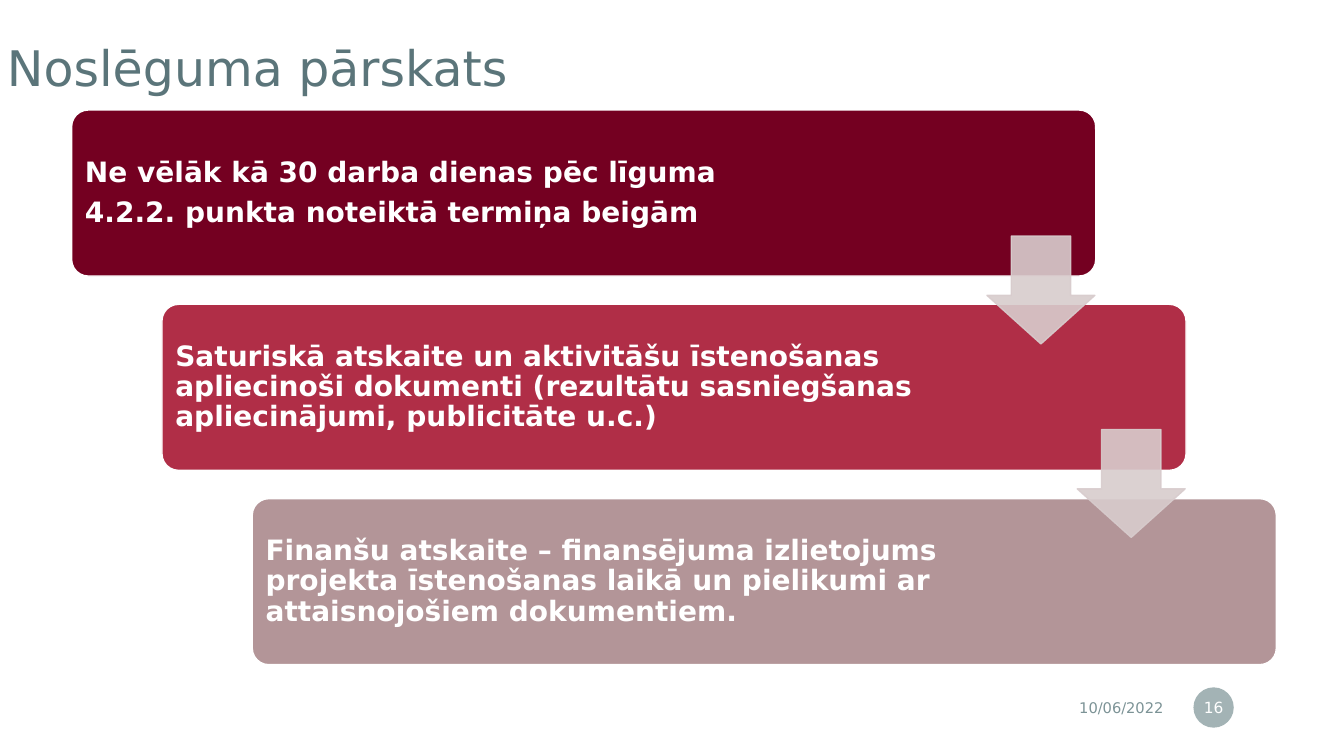
from lxml.etree import SubElement
from pptx import Presentation
from pptx.dml.color import RGBColor
from pptx.enum.shapes import MSO_SHAPE as Preset
from pptx.enum.text import MSO_ANCHOR as Anchor, PP_ALIGN as Align
from pptx.oxml.ns import qn
from pptx.util import Pt

# Content
TITLE = "Noslēguma pārskats"
DATE = "10/06/2022"
PAGE_NUMBER = "16"
# Fill, text width, space after each paragraph, paragraphs
STEPS = [
    ("740021", 602.6, 7, ["Ne vēlāk kā 30 darba dienas pēc līguma",
                          "4.2.2. punkta noteiktā termiņa beigām"]),
    ("B02E47", 582.5, 0, ["Saturiskā atskaite un aktivitāšu īstenošanas apliecinoši dokumenti "
                          "(rezultātu sasniegšanas apliecinājumi, publicitāte u.c.)"]),
    ("B39598", 582.5, 0, ["Finanšu atskaite – finansējuma izlietojums projekta īstenošanas "
                          "laikā un pielikumi ar attaisnojošiem dokumentiem."]),
]

# Layout in points
FONT = "DejaVu Sans"
CARD_LEFT, CARD_TOP, CARD_WIDTH, CARD_HEIGHT = 51.2, 78.6, 731.5, 118.6
CARD_SHIFT, CARD_PITCH = 64.5, 138.8
TEXT_GAP = 3.5
ARROW_LEFT, ARROW_TOP, ARROW_SIZE = 705, 168.6, 77.1
ARROW_PITCH = 138.2


def color(value):
    return RGBColor.from_string(value)


def set_opacity(fill, percent):
    tint = fill._xPr.find(qn("a:solidFill"))[0]
    SubElement(tint, qn("a:alpha"), val=str(percent * 1000))


def add_preset(preset, area, fill, line=None, adjust=(), opacity=100):
    shape = page.shapes.add_shape(preset, *map(Pt, area))
    shape.shadow.inherit = False
    for index, value in enumerate(adjust):
        shape.adjustments[index] = value
    shape.fill.solid()
    shape.fill.fore_color.rgb = color(fill)
    if line:
        shape.line.color.rgb = color(line)
        shape.line.width = Pt(1)
    else:
        shape.line.fill.background()
    if opacity < 100:
        set_opacity(shape.fill, opacity)
        if line:
            set_opacity(shape.line.fill, opacity)
    return shape


def write(box, lines, size, ink, bold=False, align=Align.LEFT, anchor=Anchor.MIDDLE,
          insets=(7.2, 3.6, 7.2, 3.6), spacing=1.0, after=0):
    frame = box.text_frame
    frame.word_wrap = True
    frame.vertical_anchor = anchor
    (frame.margin_left, frame.margin_top,
     frame.margin_right, frame.margin_bottom) = map(Pt, insets)
    for index, line in enumerate(lines):
        para = frame.add_paragraph() if index else frame.paragraphs[0]
        para.alignment = align
        para.line_spacing = spacing
        para.space_before = Pt(0)
        para.space_after = Pt(after)
        span = para.add_run()
        span.text = line
        span.font.name = FONT
        span.font.size = Pt(size)
        span.font.bold = bold
        span.font.color.rgb = color(ink)


deck = Presentation()
deck.slide_width, deck.slide_height = Pt(960), Pt(540)
page = deck.slides.add_slide(deck.slide_layouts[5])

# Title
title = page.shapes.title
title.left, title.top, title.width, title.height = map(Pt, (-9.4, 25.2, 821.5, 85.7))
write(title, [TITLE], 35, "5B757A", anchor=Anchor.TOP,
      insets=(14.4, 6.2, 14.4, 14.4), spacing=0.9)

# Date and page number
date = page.shapes.add_textbox(*map(Pt, (621.4, 492.5, 216.7, 25.2)))
write(date, [DATE], 10.5, "7C9396", align=Align.RIGHT)
badge = add_preset(Preset.OVAL, (852.5, 491, 28.8, 28.8), "7C9396", opacity=70)
write(badge, [PAGE_NUMBER], 11, "FFFFFF", align=Align.CENTER, insets=(1.4, 3.6, 1.4, 3.6))

# Staggered cards
for index, (fill, text_width, after, lines) in enumerate(STEPS):
    left = CARD_LEFT + index * CARD_SHIFT
    top = CARD_TOP + index * CARD_PITCH
    add_preset(Preset.ROUNDED_RECTANGLE, (left, top, CARD_WIDTH, CARD_HEIGHT),
               fill, line="FFFFFF", adjust=[0.1])
    box = page.shapes.add_textbox(Pt(left + TEXT_GAP), Pt(top + TEXT_GAP),
                                  Pt(text_width), Pt(CARD_HEIGHT - 2 * TEXT_GAP))
    write(box, lines, 20, "FFFFFF", bold=True, insets=[6] * 4, spacing=0.9, after=after)

# Arrows between the cards
for index in range(len(STEPS) - 1):
    add_preset(Preset.DOWN_ARROW,
               (ARROW_LEFT + index * CARD_SHIFT, ARROW_TOP + index * ARROW_PITCH,
                ARROW_SIZE, ARROW_SIZE),
               "D8CCCD", line="D8CCCD", adjust=[0.55, 0.45], opacity=90)

deck.save("out.pptx")
